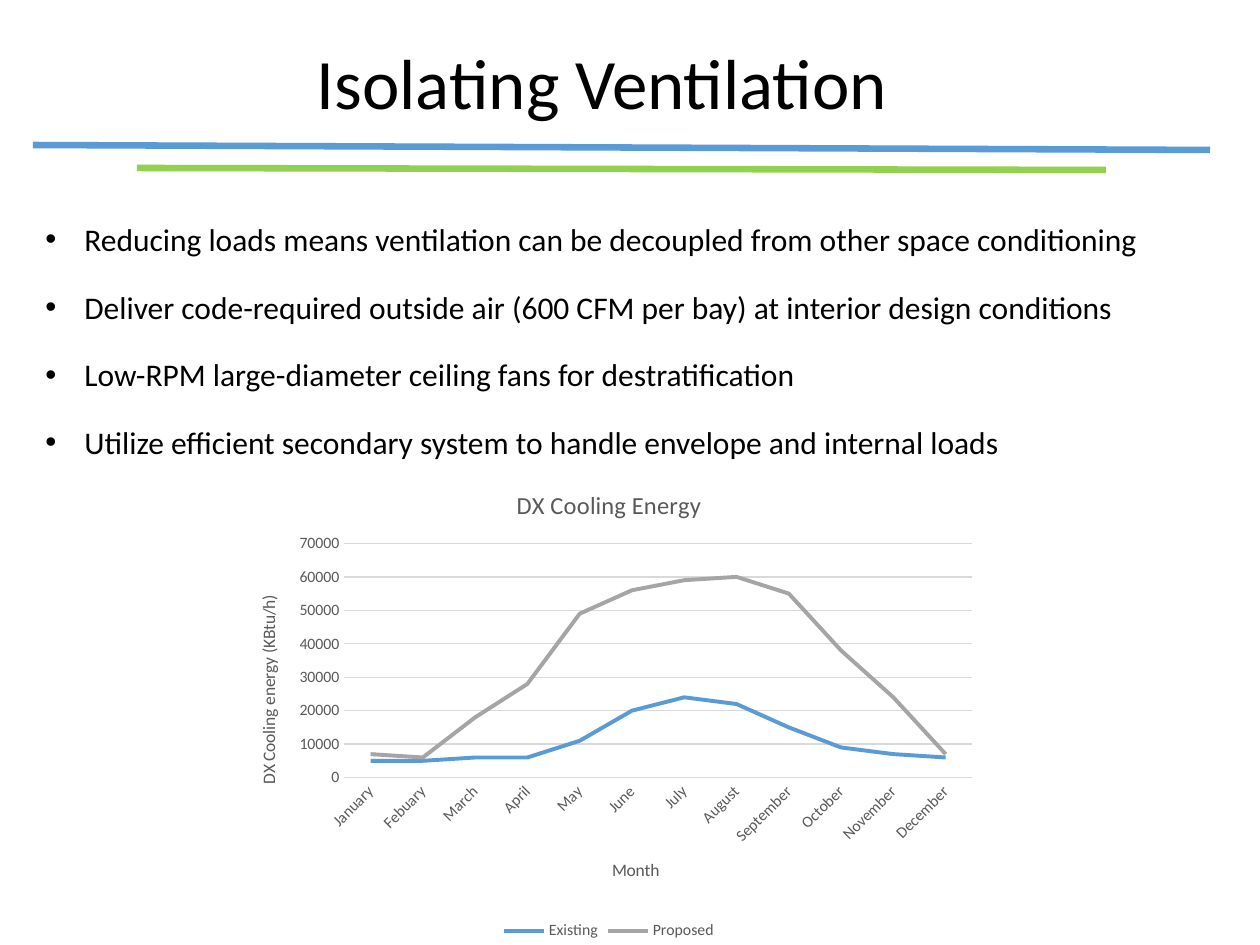
import pptx
import pptx.util
import pptx.chart.data
import pptx.dml.color
import pptx.enum.chart
import pptx.enum.shapes
import pptx.enum.text
import pptx.oxml
import pptx.oxml.ns
import lxml.etree

RGB = pptx.dml.color.RGBColor
Pt = pptx.util.Pt
BLACK = RGB(0x00, 0x00, 0x00)
BLUE = RGB(0x5B, 0x9B, 0xD5)
GREEN = RGB(0x92, 0xD0, 0x50)
GRAY = RGB(0xA5, 0xA5, 0xA5)
TEXT_GRAY = RGB(0x59, 0x59, 0x59)
GRID = RGB(0xD9, 0xD9, 0xD9)
FONT = "Calibri"

# Content
TITLE = "Isolating Ventilation "
BULLETS = [
    "Reducing loads means ventilation can be decoupled from other space conditioning",
    "Deliver code-required outside air (600 CFM per bay) at interior design conditions",
    "Low-RPM large-diameter ceiling fans for destratification",
    "Utilize efficient secondary system to handle envelope and internal loads",
]
RULES = [((33, 145), (1210, 150), BLUE), ((137, 168), (1106, 170), GREEN)]
CHART_TITLE = "DX Cooling Energy"
MONTHS = ["January", "Febuary", "March", "April", "May", "June", "July",
          "August", "September", "October", "November", "December"]
SERIES = [
    ("Existing", BLUE, [5000, 5000, 6000, 6000, 11000, 20000,
                        24000, 22000, 15000, 9000, 7000, 6000]),
    ("Proposed", GRAY, [7000, 6000, 18000, 28000, 49000, 56000,
                        59000, 60000, 55000, 38000, 24000, 7000]),
]
PLOT_AREA = {"x": 0.15, "y": 0.16, "w": 0.83, "h": 0.49}


def px(n):
    return round(n * 914400 / 126)


def box(*sides):
    return [px(n) for n in sides]


def style(font, size, color):
    font.name, font.size, font.bold = FONT, Pt(size), False
    font.color.rgb = color


def set_title(owner, text, size):
    tf = owner.text_frame
    tf.text = text
    style(tf.paragraphs[0].runs[0].font, size, TEXT_GRAY)


prs = pptx.Presentation()
prs.slide_width, prs.slide_height = box(1260, 945)
s = prs.slides.add_slide(prs.slide_layouts[5])

# Title
sp = s.shapes.title
sp.left, sp.top, sp.width, sp.height = box(168, 3, 885, 128)
tf = sp.text_frame
tf.text = TITLE
tf.vertical_anchor = pptx.enum.text.MSO_ANCHOR.BOTTOM
p = tf.paragraphs[0]
p.alignment = pptx.enum.text.PP_ALIGN.CENTER
p.line_spacing = 0.9
style(p.runs[0].font, 40.5, BLACK)

# Rules under the title
for start, end, color in RULES:
    line = s.shapes.add_connector(pptx.enum.shapes.MSO_CONNECTOR.STRAIGHT, *box(*start, *end))
    line.line.color.rgb = color
    line.line.width = Pt(3.75)
    lxml.etree.SubElement(line._element.spPr, pptx.oxml.ns.qn("a:effectLst"))

# Bullets
tf = s.shapes.add_textbox(*box(33, 214, 1205, 339)).text_frame
tf.word_wrap = True
for i, text in enumerate(BULLETS):
    p = tf.paragraphs[0] if i == 0 else tf.add_paragraph()
    p.text = text
    p.space_before = Pt(17 if i else 0)
    style(p.runs[0].font, 18, BLACK)
    pPr = p._p.get_or_add_pPr()
    pPr.set("marL", str(px(39)))
    pPr.set("indent", str(-px(39)))
    lxml.etree.SubElement(pPr, pptx.oxml.ns.qn("a:buFont")).set("typeface", "Arial")
    lxml.etree.SubElement(pPr, pptx.oxml.ns.qn("a:buChar")).set("char", "•")

# Chart
data = pptx.chart.data.CategoryChartData()
data.categories = MONTHS
for name, _, values in SERIES:
    data.add_series(name, values)
chart = s.shapes.add_chart(pptx.enum.chart.XL_CHART_TYPE.LINE,
                           *box(231, 467, 756, 478), data).chart
style(chart.font, 10, BLACK)
chart.has_title = True
set_title(chart.chart_title, CHART_TITLE, 14)
chart.has_legend = True
chart.legend.position = pptx.enum.chart.XL_LEGEND_POSITION.BOTTOM
chart.legend.include_in_layout = False
style(chart.legend.font, 9, TEXT_GRAY)

plot = chart.plots[0]
plot.vary_by_categories = False
for series, (_, color, _) in zip(plot.series, SERIES):
    series.smooth = False
    series.marker.style = pptx.enum.chart.XL_MARKER_STYLE.NONE
    series.format.line.color.rgb = color
    series.format.line.width = Pt(2.25)

# Axes
for axis, text in ((chart.category_axis, "Month"),
                   (chart.value_axis, "DX Cooling energy (KBtu/h)")):
    set_title(axis.axis_title, text, 10)
    style(axis.tick_labels.font, 9, TEXT_GRAY)
    axis.major_tick_mark = axis.minor_tick_mark = pptx.enum.chart.XL_TICK_MARK.NONE
chart.value_axis.minimum_scale = 0
chart.value_axis.maximum_scale = 70000
chart.value_axis.major_unit = 10000
chart.value_axis.format.line.fill.background()
for rule in (chart.category_axis.format.line, chart.value_axis.major_gridlines.format.line):
    rule.color.rgb = GRID
    rule.width = Pt(0.75)

# Fixed inner plot area
area = chart._chartSpace.chart.plotArea
for old in area.findall(pptx.oxml.ns.qn("c:layout")):
    area.remove(old)
layout = pptx.oxml.parse_xml("<c:layout %s><c:manualLayout/></c:layout>" % pptx.oxml.ns.nsdecls("c"))
area.insert(0, layout)
settings = {"layoutTarget": "inner", "xMode": "edge", "yMode": "edge", **PLOT_AREA}
for tag, value in settings.items():
    lxml.etree.SubElement(layout[0], pptx.oxml.ns.qn("c:" + tag)).set("val", str(value))

prs.save("out.pptx")
